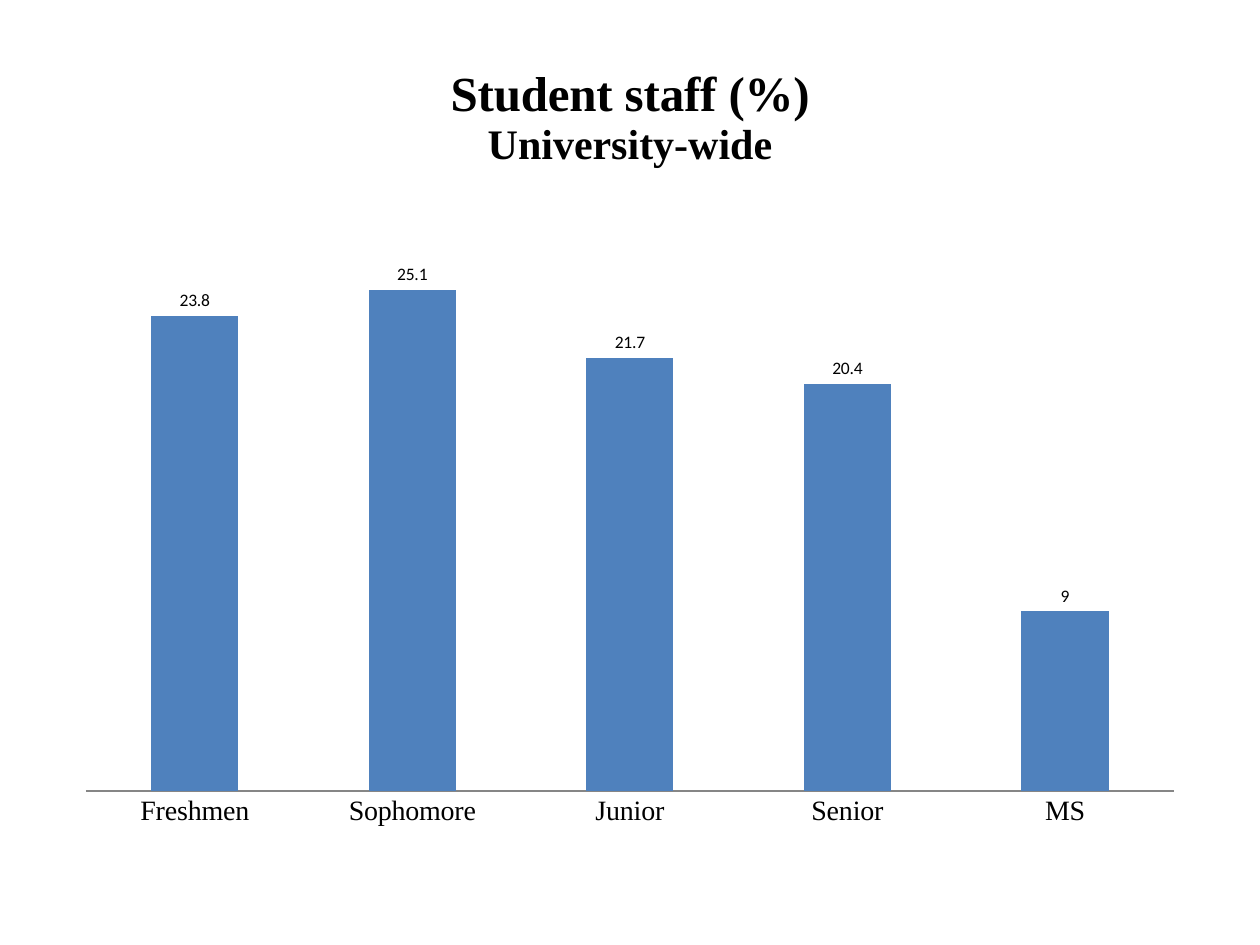
import pptx
import pptx.chart.data
import pptx.dml.color
import pptx.enum.chart
import pptx.oxml
import pptx.oxml.ns
import pptx.util

PX_PER_INCH = 126
COLORS = {"text": "000000", "bar": "4F81BD", "axis": "868686"}
TITLE_LINES = [("Student staff (%)", 28), ("University-wide", 24)]
STAFF_SHARES = {"Freshmen": 23.8, "Sophomore": 25.1, "Junior": 21.7,
                "Senior": 20.4, "MS": 9}


def px(length):
    return pptx.util.Emu(round(length * 914400 / PX_PER_INCH))


def style_font(font, name, size, bold=False):
    font.name = name
    font.size = pptx.util.Pt(size)
    font.bold = bold
    font.color.rgb = pptx.dml.color.RGBColor.from_string(COLORS["text"])


def add_chart_title(chart):
    chart.has_title = True
    chart.chart_title.include_in_layout = False
    text_frame = chart.chart_title.text_frame
    for index, (text, size) in enumerate(TITLE_LINES):
        paragraph = text_frame.add_paragraph() if index else text_frame.paragraphs[0]
        run = paragraph.add_run()
        run.text = text
        style_font(run.font, "Times New Roman", size, bold=True)


def place_plot(chart, width, height, plot_box):
    """Fix the inner plot area, given in px relative to the chart's box."""
    left, top, plot_width, plot_height = plot_box
    fractions = {"x": left / width, "y": top / height,
                 "w": plot_width / width, "h": plot_height / height}
    settings = '<c:layoutTarget val="inner"/><c:xMode val="edge"/><c:yMode val="edge"/>'
    settings += "".join(f'<c:{key} val="{value:.4f}"/>' for key, value in fractions.items())
    layout = pptx.oxml.parse_xml(
        f'<c:layout {pptx.oxml.ns.nsdecls("c")}>'
        f"<c:manualLayout>{settings}</c:manualLayout></c:layout>")
    plot_area = chart.plots[0]._element.getparent()
    for old_layout in plot_area.findall(pptx.oxml.ns.qn("c:layout")):
        plot_area.remove(old_layout)
    plot_area.insert(0, layout)


def add_staff_chart(slide, left, top, width, height):
    chart_data = pptx.chart.data.CategoryChartData()
    chart_data.categories = list(STAFF_SHARES)
    chart_data.add_series("Series 1", list(STAFF_SHARES.values()))
    chart = slide.shapes.add_chart(
        pptx.enum.chart.XL_CHART_TYPE.COLUMN_CLUSTERED,
        px(left), px(top), px(width), px(height), chart_data).chart
    style_font(chart.font, "Calibri", 10)
    chart.has_legend = False
    add_chart_title(chart)

    # Columns and their value labels
    plot = chart.plots[0]
    plot.vary_by_categories = False
    plot.gap_width = 150
    plot.overlap = -25
    fill = plot.series[0].format.fill
    fill.solid()
    fill.fore_color.rgb = pptx.dml.color.RGBColor.from_string(COLORS["bar"])
    plot.has_data_labels = True
    labels = plot.data_labels
    labels.show_value = True
    labels.position = pptx.enum.chart.XL_LABEL_POSITION.OUTSIDE_END
    style_font(labels.font, "Calibri", 10)

    # Axes: named categories, hidden values
    category_axis = chart.category_axis
    category_axis.major_tick_mark = pptx.enum.chart.XL_TICK_MARK.NONE
    category_axis.minor_tick_mark = pptx.enum.chart.XL_TICK_MARK.NONE
    style_font(category_axis.tick_labels.font, "Times New Roman", 16)
    line = category_axis.format.line
    line.color.rgb = pptx.dml.color.RGBColor.from_string(COLORS["axis"])
    line.width = pptx.util.Pt(0.75)
    value_axis = chart.value_axis
    value_axis.minimum_scale = 0
    value_axis.maximum_scale = 30
    value_axis.has_major_gridlines = False
    value_axis.visible = False

    place_plot(chart, width, height, (23, 153, 1088, 599))


def main():
    presentation = pptx.Presentation()
    presentation.slide_width = px(1260)
    presentation.slide_height = px(945)
    slide = presentation.slides.add_slide(presentation.slide_layouts[6])
    add_staff_chart(slide, 63, 39, 1134, 805)
    presentation.save("out.pptx")


if __name__ == "__main__":
    main()
